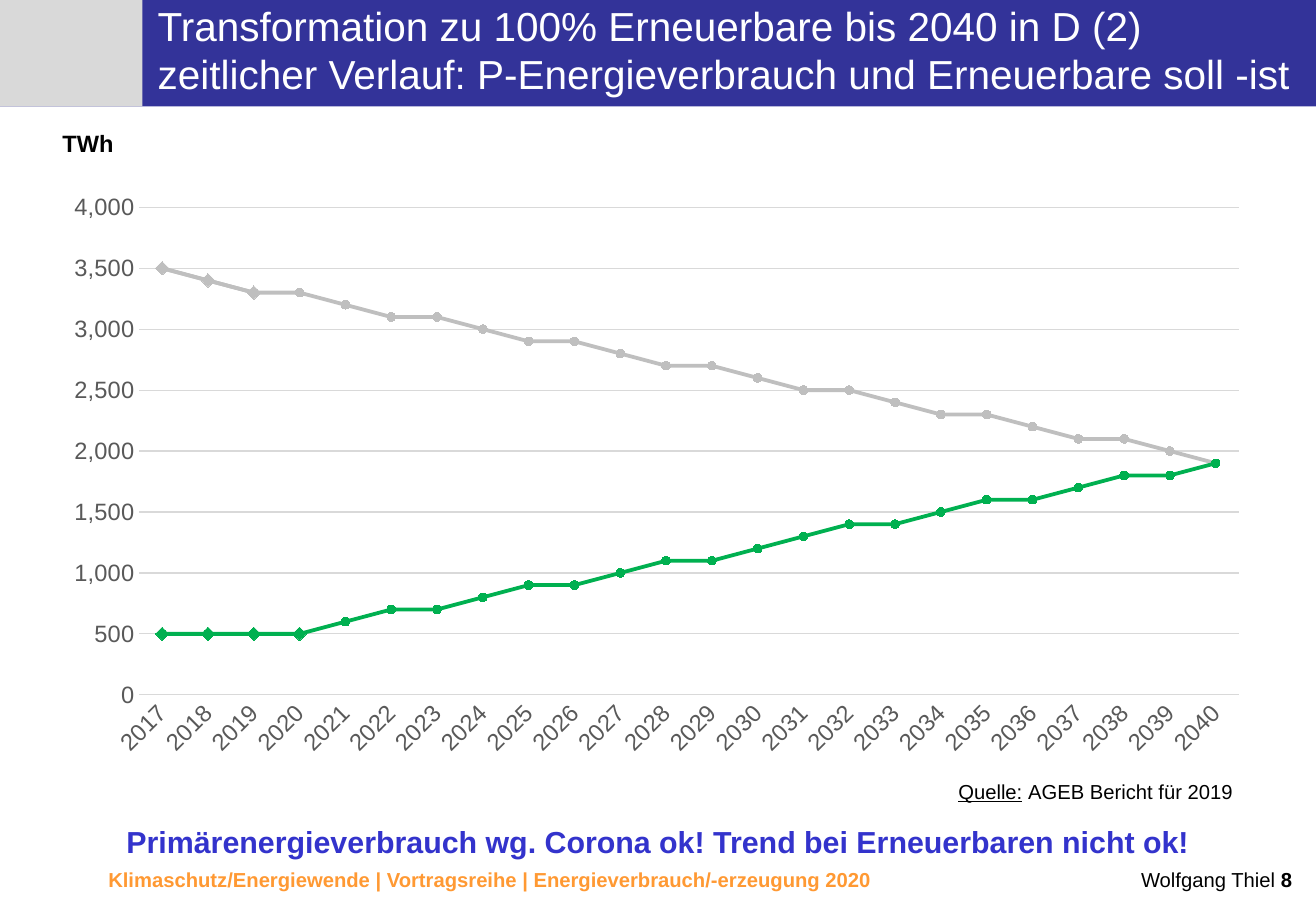
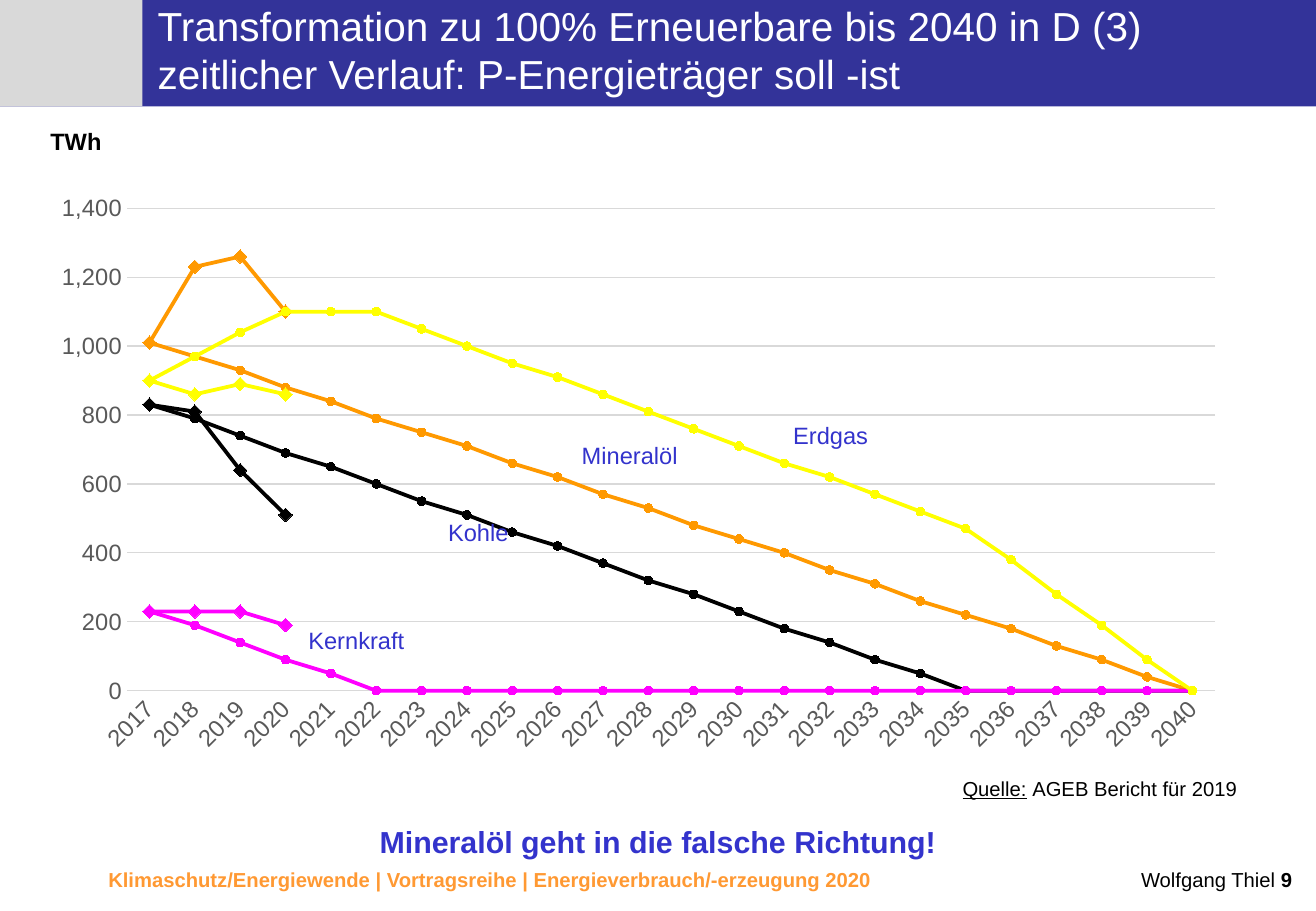
from dataclasses import dataclass

from lxml import etree
from pptx import Presentation
from pptx.chart.data import CategoryChartData
from pptx.dml.color import RGBColor
from pptx.enum.chart import XL_CHART_TYPE, XL_MARKER_STYLE, XL_TICK_MARK
from pptx.enum.shapes import MSO_SHAPE
from pptx.enum.text import MSO_ANCHOR, MSO_AUTO_SIZE, PP_ALIGN
from pptx.oxml.ns import qn
from pptx.util import Pt

LEFT, CENTER, RIGHT = PP_ALIGN.LEFT, PP_ALIGN.CENTER, PP_ALIGN.RIGHT
CIRCLE, DIAMOND = XL_MARKER_STYLE.CIRCLE, XL_MARKER_STYLE.DIAMOND
NO_TICK = XL_TICK_MARK.NONE
TITLE_ONLY = 5


@dataclass(frozen=True)
class Theme:
    font: str = "Arial"
    band: str = "333399"
    corner: str = "D9D9D9"
    grid: str = "D9D9D9"
    axis_text: str = "595959"
    accent: str = "3333CC"
    footer: str = "FF9933"
    text: str = "000000"
    light: str = "FFFFFF"
    title_size: int = 24
    message_size: int = 18
    label_size: int = 14
    small_size: int = 12


THEME = Theme()
WIDTH, HEIGHT, BAND_HEIGHT = 780, 540, 63

YEARS = [str(year) for year in range(2017, 2041)]
GREY, GREEN = "BFBFBF", "00B050"
ORANGE, BLACK, MAGENTA, YELLOW = "FF9900", "000000", "FF00FF", "FFFF00"

# name, colour, planned values, actual values
CONSUMPTION = [
    ("Primärenergieverbrauch", GREY,
     [3500, 3400, 3300, 3300, 3200, 3100, 3100, 3000, 2900, 2900, 2800, 2700,
      2700, 2600, 2500, 2500, 2400, 2300, 2300, 2200, 2100, 2100, 2000, 1900],
     [3500, 3400, 3300]),
    ("Erneuerbare", GREEN,
     [500, 500, 500, 500, 600, 700, 700, 800, 900, 900, 1000, 1100,
      1100, 1200, 1300, 1400, 1400, 1500, 1600, 1600, 1700, 1800, 1800, 1900],
     [500, 500, 500, 500]),
]
SOURCES = [
    ("Mineralöl", ORANGE,
     [1010, 970, 930, 880, 840, 790, 750, 710, 660, 620, 570, 530,
      480, 440, 400, 350, 310, 260, 220, 180, 130, 90, 40, 0],
     [1010, 1230, 1260, 1100]),
    ("Kohle", BLACK,
     [830, 790, 740, 690, 650, 600, 550, 510, 460, 420, 370, 320,
      280, 230, 180, 140, 90, 50, 0, 0, 0, 0, 0, 0],
     [830, 810, 640, 510]),
    ("Kernkraft", MAGENTA,
     [230, 190, 140, 90, 50] + [0] * 19,
     [230, 230, 230, 190]),
    ("Erdgas", YELLOW,
     [900, 970, 1040, 1100, 1100, 1100, 1050, 1000, 950, 910, 860, 810,
      760, 710, 660, 620, 570, 520, 470, 380, 280, 190, 90, 0],
     [900, 860, 890, 860]),
]
SOURCE_LABELS = [
    ("Erdgas", 463, 245.8, 59),
    ("Mineralöl", 337.7, 257.8, 71.3),
    ("Kohle", 258.5, 303.5, 50.4),
    ("Kernkraft", 175.7, 367.2, 72),
]


def rgb(code):
    return RGBColor.from_string(code)


def write_text(box, *spans, size, color=THEME.text, bold=False, align=LEFT,
               inset=None, wrap=True, anchor=MSO_ANCHOR.TOP, spacing=None,
               auto_size=MSO_AUTO_SIZE.SHAPE_TO_FIT_TEXT):
    """Fill the first paragraph; a span is text or (text, font overrides)."""
    frame = box.text_frame
    frame.word_wrap = wrap
    frame.auto_size = auto_size
    frame.vertical_anchor = anchor
    if inset is not None:
        frame.margin_left = frame.margin_right = Pt(inset)
        frame.margin_top = frame.margin_bottom = Pt(inset)
    paragraph = frame.paragraphs[0]
    paragraph.alignment = align
    if spacing:
        paragraph.line_spacing = spacing
    for span in spans:
        text, overrides = (span, {}) if isinstance(span, str) else span
        if text == "\v":
            paragraph.add_line_break()
            continue
        run = paragraph.add_run()
        run.text = text
        font = run.font
        font.name, font.size, font.bold = THEME.font, Pt(size), bold
        font.color.rgb = rgb(color)
        for name, value in overrides.items():
            setattr(font, name, value)


class Pages:
    """Holds the deck, its theme and the slide being built."""

    def __init__(self, theme, first_number):
        self.theme = theme
        self.number = first_number - 1
        self.deck = Presentation()
        self.deck.slide_width, self.deck.slide_height = Pt(WIDTH), Pt(HEIGHT)
        self.layout = self.deck.slide_layouts[TITLE_ONLY]
        self.page = None

    def start(self, *title_lines):
        theme = self.theme
        self.number += 1
        self.page = self.deck.slides.add_slide(self.layout)
        if len(self.deck.slides) == 1:
            self.furnish_layout()
        title = self.page.shapes.title
        title.left, title.top = Pt(93.4), Pt(0)
        title.width, title.height = Pt(WIDTH - 93.4), Pt(58.3)
        first, second = title_lines
        write_text(title, first, "\v", second, size=theme.title_size,
                   color=theme.light, inset=0, spacing=1.0,
                   anchor=MSO_ANCHOR.MIDDLE, auto_size=MSO_AUTO_SIZE.NONE)
        self.text(576.4, 511.9, 196.6, 20.2, "Wolfgang Thiel ",
                  (str(self.number), {"bold": True}),
                  size=theme.small_size, align=RIGHT, spacing=0.9)

    def furnish_layout(self):
        """Move the bands and the footer text from the first slide to the layout."""
        for placeholder in list(self.layout.placeholders):
            if placeholder.placeholder_format.idx:
                placeholder.element.getparent().remove(placeholder.element)
        shared = [
            self.band(WIDTH, self.theme.band),
            self.band(84.4, self.theme.corner),
            self.text(57.1, 510.5, 475, 21.6,
                      "Klimaschutz/Energiewende | Vortragsreihe | "
                      "Energieverbrauch/-erzeugung 2020",
                      size=self.theme.small_size, color=self.theme.footer, bold=True),
        ]
        tree = self.layout.shapes.element
        for position, shape in enumerate(shared, start=2):
            tree.insert(position, shape.element)

    def band(self, width, color):
        shape = self.page.shapes.add_shape(
            MSO_SHAPE.RECTANGLE, Pt(0), Pt(0), Pt(width), Pt(BAND_HEIGHT))
        shape.shadow.inherit = False
        shape.fill.solid()
        shape.fill.fore_color.rgb = rgb(color)
        shape.line.fill.background()
        return shape

    def text(self, left, top, width, height, *spans, **text_format):
        box = self.page.shapes.add_textbox(Pt(left), Pt(top), Pt(width), Pt(height))
        write_text(box, *spans, **text_format)
        return box

    def unit(self, left, top):
        self.text(left, top, 45.4, 24.5, "TWh", size=self.theme.label_size,
                  bold=True, align=CENTER, wrap=False)

    def label(self, name, left, top, width):
        self.text(left, top, width, 24.5, name, size=self.theme.label_size,
                  color=self.theme.accent, wrap=False)

    def message(self, words):
        self.text(22.5, 483.1, 735, 31.7, words, size=self.theme.message_size,
                  color=self.theme.accent, bold=True, align=CENTER, inset=5)

    def source(self, left, top):
        self.text(left, top, 164.2, 14.4, ("Quelle:", {"underline": True}),
                  (" ", {"bold": True}), "AGEB Bericht für 2019",
                  size=self.theme.small_size, inset=0, wrap=False)

    def chart(self, left, top, width, height, groups, maximum, step):
        """Draw each group as a planned line and a shorter actual line."""
        data = CategoryChartData(number_format="#,##0")
        data.categories = YEARS
        styles = []
        for name, color, planned, actual in groups:
            data.add_series(f"{name} soll", planned)
            data.add_series(f"{name} ist", actual + [None] * (len(YEARS) - len(actual)))
            styles += [(color, CIRCLE, 5), (color, DIAMOND, 8)]
        chart = self.page.shapes.add_chart(
            XL_CHART_TYPE.LINE_MARKERS, Pt(left), Pt(top), Pt(width), Pt(height),
            data).chart
        chart.has_legend = chart.has_title = False
        chart.font.name = self.theme.font
        plot = chart.plots[0]
        plot.vary_by_categories = False
        for series, (color, marker, size) in zip(plot.series, styles):
            series.smooth = False
            series.format.line.color.rgb = rgb(color)
            series.format.line.width = Pt(2.25)
            series.marker.style, series.marker.size = marker, size
            series.marker.format.fill.solid()
            series.marker.format.fill.fore_color.rgb = rgb(color)
            series.marker.format.line.color.rgb = rgb(color)
        self.format_axes(chart, maximum, step)
        self.place_plot(chart, x=0.074, y=0.043, w=0.906, h=0.833)

    def format_axes(self, chart, maximum, step):
        years, amounts = chart.category_axis, chart.value_axis
        for axis in (years, amounts):
            axis.major_tick_mark = axis.minor_tick_mark = NO_TICK
            font = axis.tick_labels.font
            font.name, font.size = self.theme.font, Pt(self.theme.label_size)
            font.color.rgb = rgb(self.theme.axis_text)
        years.has_major_gridlines = False
        years._element.find(qn("c:txPr")).find(qn("a:bodyPr")).set("rot", "-2700000")
        amounts.minimum_scale, amounts.maximum_scale = 0, maximum
        amounts.major_unit = step
        amounts.has_major_gridlines = True
        amounts.tick_labels.number_format = "#,##0"
        amounts.tick_labels.number_format_is_linked = False
        amounts.format.line.fill.background()
        for line in (years.format.line, amounts.major_gridlines.format.line):
            line.color.rgb = rgb(self.theme.grid)
            line.width = Pt(0.75)

    @staticmethod
    def place_plot(chart, **fractions):
        """Fix the inner plot area as fractions of the chart frame."""
        area = chart._chartSpace.chart.plotArea
        layout = area.find(qn("c:layout"))
        if layout is None:
            layout = etree.Element(qn("c:layout"))
            area.insert(0, layout)
        manual = etree.SubElement(layout, qn("c:manualLayout"))
        settings = {"layoutTarget": "inner", "xMode": "edge", "yMode": "edge", **fractions}
        for name, value in settings.items():
            etree.SubElement(manual, qn(f"c:{name}")).set("val", str(value))


def main():
    pages = Pages(THEME, first_number=8)

    pages.start("Transformation zu 100% Erneuerbare bis 2040 in D (2)",
                "zeitlicher Verlauf: P-Energieverbrauch und Erneuerbare soll -ist")
    pages.chart(29.3, 108, 719.3, 347, CONSUMPTION, maximum=4000, step=500)
    pages.unit(29.5, 72.7)
    pages.source(568, 461.8)
    pages.message("Primärenergieverbrauch wg. Corona ok! Trend bei Erneuerbaren nicht ok!")

    pages.start("Transformation zu 100% Erneuerbare bis 2040 in D (3)",
                "zeitlicher Verlauf: P-Energieträger soll -ist")
    pages.chart(22.5, 108.7, 712, 343.4, SOURCES, maximum=1400, step=200)
    pages.unit(22.3, 71.7)
    for label in SOURCE_LABELS:
        pages.label(*label)
    pages.source(570.5, 460)
    pages.message("Mineralöl geht in die falsche Richtung!")

    pages.deck.save("out.pptx")


if __name__ == "__main__":
    main()
